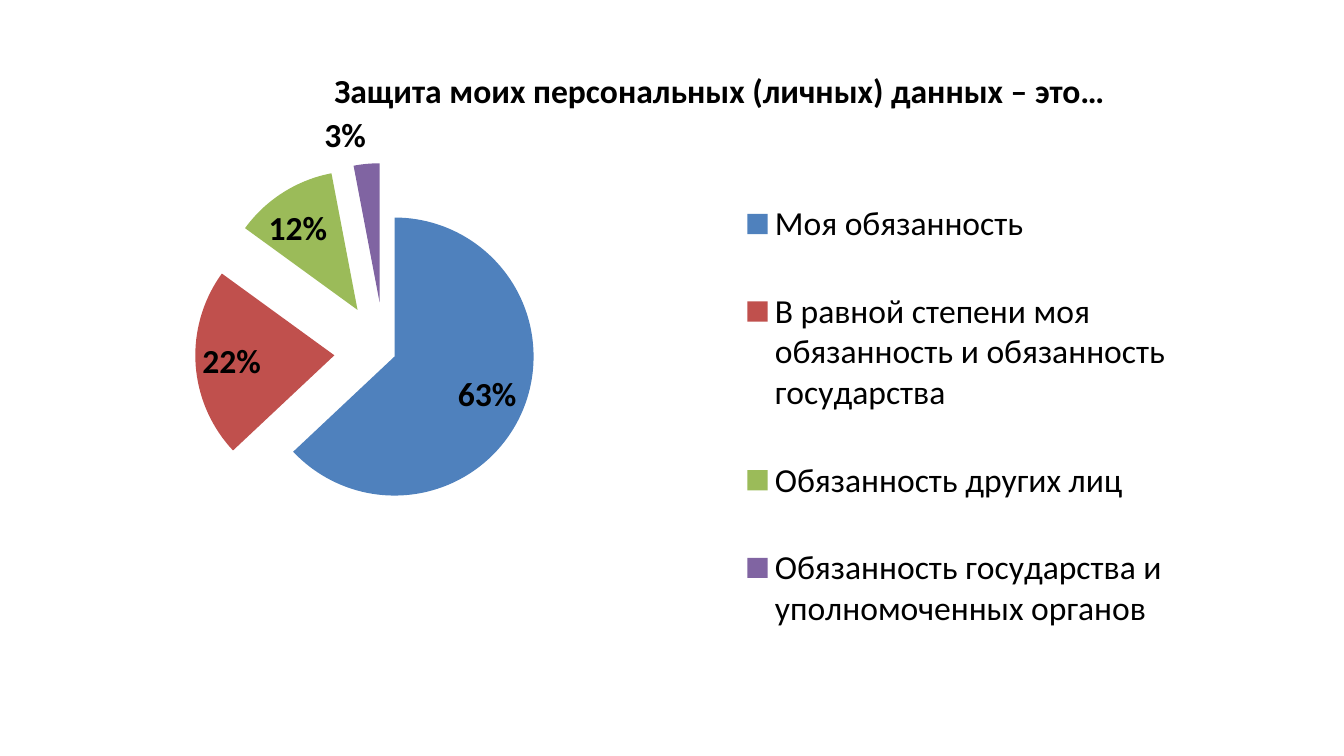
import dataclasses

import pptx
import pptx.chart.data
import pptx.dml.color
import pptx.enum.chart
import pptx.enum.text
import pptx.oxml
import pptx.oxml.ns
import pptx.util
from pptx.util import Inches

FONT = "Calibri"
EXPLOSION = 36
COLORS = {
    "text": "000000",
    "blue": "4F81BD",
    "red": "C0504D",
    "green": "9BBB59",
    "purple": "8064A2",
}


@dataclasses.dataclass(frozen=True)
class Answer:
    label: str
    percent: int
    color: str
    explosion: int = EXPLOSION


ANSWERS = [
    Answer("Моя обязанность", 63, "blue", 8),
    Answer("В равной степени моя обязанность и обязанность государства", 22, "red"),
    Answer("Обязанность других лиц", 12, "green"),
    Answer("Обязанность государства и уполномоченных органов", 3, "purple"),
]


def rgb(name: str) -> pptx.dml.color.RGBColor:
    return pptx.dml.color.RGBColor.from_string(COLORS[name])


def format_font(font, size: float = 18, bold: bool = False, color: str = "text") -> None:
    font.name = FONT
    font.size = pptx.util.Pt(size)
    font.bold = bold
    font.color.rgb = rgb(color)


def write_text(shape, text: str, *, size: float = 18, bold: bool = False,
               align=pptx.enum.text.PP_ALIGN.CENTER) -> None:
    frame = shape.text_frame
    frame.word_wrap = True
    frame.vertical_anchor = pptx.enum.text.MSO_ANCHOR.TOP
    frame.auto_size = pptx.enum.text.MSO_AUTO_SIZE.SHAPE_TO_FIT_TEXT
    frame.text = text
    paragraph = frame.paragraphs[0]
    paragraph.alignment = align
    format_font(paragraph.runs[0].font, size, bold)


def layout_xml(x: float, y: float, width: float, height: float, inner: bool = False):
    target = '<c:layoutTarget val="inner"/>' if inner else ""
    return pptx.oxml.parse_xml(
        f'<c:layout {pptx.oxml.ns.nsdecls("c")}><c:manualLayout>{target}'
        '<c:xMode val="edge"/><c:yMode val="edge"/>'
        f'<c:x val="{x}"/><c:y val="{y}"/><c:w val="{width}"/><c:h val="{height}"/>'
        "</c:manualLayout></c:layout>"
    )


def remove_layout(element) -> None:
    for old_layout in element.findall(pptx.oxml.ns.qn("c:layout")):
        element.remove(old_layout)


def set_plot_layout(chart, layout) -> None:
    plot_area = chart._chartSpace.chart.plotArea
    remove_layout(plot_area)
    plot_area.insert(0, layout)


def set_legend_layout(chart, layout) -> None:
    legend = chart.legend._element
    remove_layout(legend)
    legend.find(pptx.oxml.ns.qn("c:legendPos")).addnext(layout)


def explosion_xml(percent: int):
    return pptx.oxml.parse_xml(
        f'<c:explosion {pptx.oxml.ns.nsdecls("c")} val="{percent}"/>'
    )


def explode_slices(series, answers: list[Answer]) -> None:
    points = series._element.findall(pptx.oxml.ns.qn("c:dPt"))
    points[0].addprevious(explosion_xml(EXPLOSION))
    for point, answer in zip(points, answers):
        properties = point.find(pptx.oxml.ns.qn("c:spPr"))
        properties.addprevious(explosion_xml(answer.explosion))


def add_answer_pie(slide, answers: list[Answer]) -> None:
    chart_data = pptx.chart.data.CategoryChartData(number_format='0"%"')
    chart_data.categories = [answer.label for answer in answers]
    chart_data.add_series("Series 1", [answer.percent for answer in answers])
    chart = slide.shapes.add_chart(
        pptx.enum.chart.XL_CHART_TYPE.PIE,
        Inches(0.62), Inches(0.26), Inches(8.96), Inches(4.77), chart_data,
    ).chart
    chart.has_title = False
    format_font(chart.font)

    chart.has_legend = True
    chart.legend.position = pptx.enum.chart.XL_LEGEND_POSITION.RIGHT
    chart.legend.include_in_layout = False
    format_font(chart.legend.font)
    set_legend_layout(chart, layout_xml(0.52, 0.19, 0.41, 0.81))
    set_plot_layout(chart, layout_xml(0.05, 0.2, 0.4, 0.59, inner=True))

    plot = chart.plots[0]
    plot.vary_by_categories = True
    plot.has_data_labels = True
    labels = plot.data_labels
    labels.show_value = True
    labels.show_percentage = False
    labels.number_format = '0"%"'
    labels.number_format_is_linked = False
    labels.position = pptx.enum.chart.XL_LABEL_POSITION.BEST_FIT
    format_font(labels.font, bold=True)

    series = plot.series[0]
    for index, answer in enumerate(answers):
        fill = series.points[index].format.fill
        fill.solid()
        fill.fore_color.rgb = rgb(answer.color)
    explode_slices(series, answers)


def main() -> None:
    presentation = pptx.Presentation()
    presentation.slide_width = Inches(10)
    presentation.slide_height = presentation.slide_width * 9 // 16
    slide = presentation.slides.add_slide(presentation.slide_layouts[5])

    title = slide.shapes.title
    title.left, title.top = Inches(1.49), Inches(0.47)
    title.width, title.height = Inches(7.73), Inches(0.4)
    write_text(title, "Защита моих персональных (личных) данных – это…", bold=True)

    add_answer_pie(slide, ANSWERS)
    presentation.save("out.pptx")


if __name__ == "__main__":
    main()
